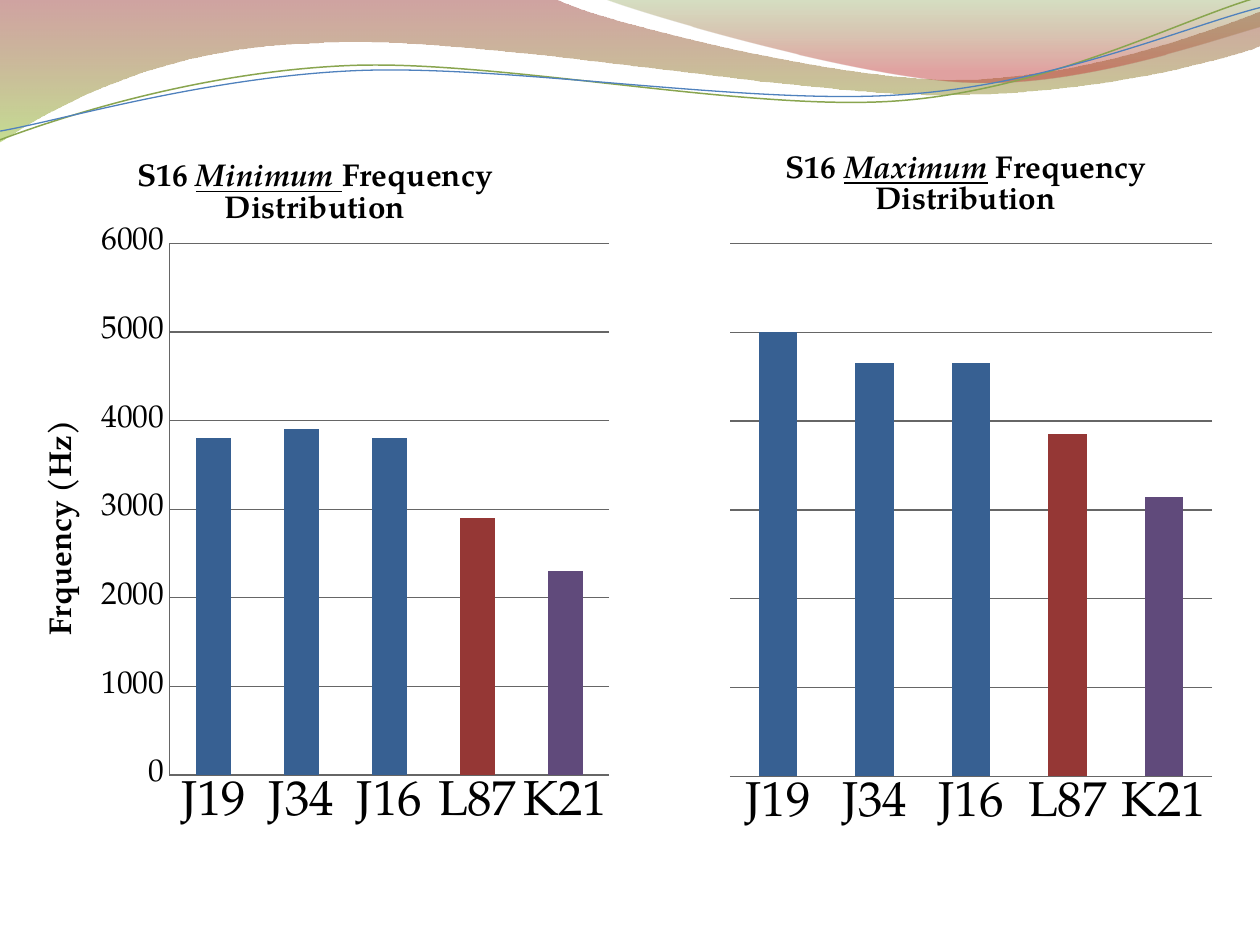
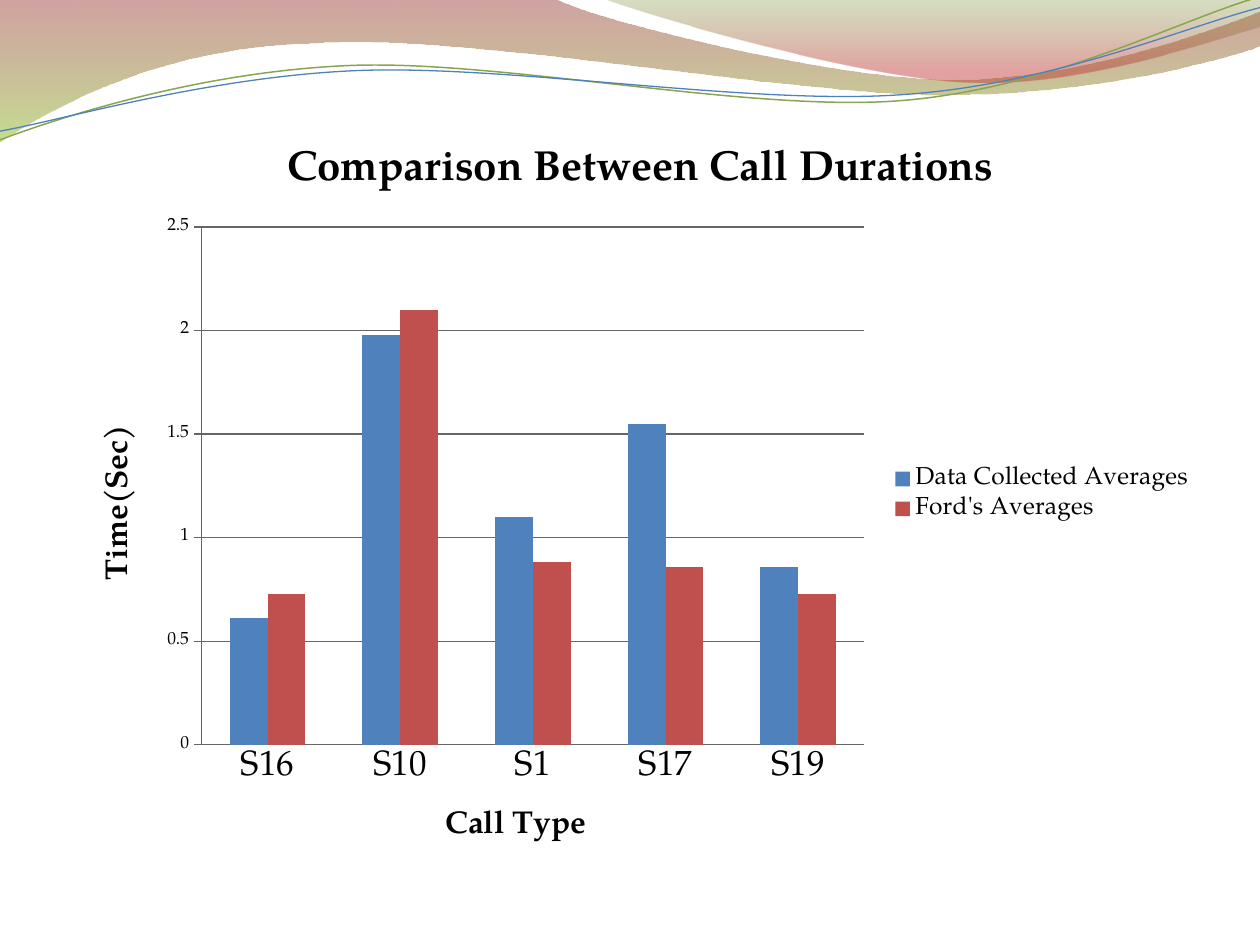
import math

from lxml import etree
from pptx import Presentation
from pptx.chart.data import CategoryChartData
from pptx.dml.color import RGBColor
from pptx.enum import chart as ch
from pptx.oxml import ns
from pptx.util import Inches, Pt

FONT = "TeX Gyre Pagella"
COLORS = {
    "text": "000000", "grid": "666666",
    "blue": "4F81BD", "red": "C0504D", "green": "89A54F",
    "J pod": "376092", "L pod": "953735", "K pod": "604A7B",
    "wave top": "973330", "wave foot": "95C238",
    "crest top": "769537", "crest foot": "BE3330",
}

# A path is a list of points (2 numbers) and Bezier segments (6 numbers), in inches.
WAVE = [(0, 0), (4.4, -0.01),
        (4.76, 0.17, 6.64, 0.63, 7.58, 0.63), (8.53, 0.63, 9.58, 0.26, 10, 0.09),
        (10.01, 0.36),
        (9.83, 0.44, 8.7, 0.76, 7.46, 0.75), (6.22, 0.75, 3.82, 0.28, 2.57, 0.34),
        (1.29, 0.36, 0.46, 0.83, -0.01, 1.13), (0, 0)]
CREST = [(4.79, -0.01),
         (5.09, 0.11, 6.82, 0.62, 7.69, 0.65), (8.56, 0.69, 9.61, 0.32, 10, 0.21),
         (10, 0), (4.79, -0.01)]
GREEN_STRAND = [(0, 1.11), (0.48, 0.93, 1.58, 0.57, 2.77, 0.52),
                (3.95, 0.47, 5.93, 0.89, 7.13, 0.8), (8.33, 0.71, 9.38, 0.15, 9.98, -0.02)]
BLUE_STRAND = [(0, 1.04), (0.47, 0.96, 1.64, 0.61, 2.83, 0.56),
               (4.03, 0.51, 5.97, 0.84, 7.17, 0.75), (8.36, 0.67, 9.41, 0.21, 10, 0.06)]
STRAND_TILT = -2.7

WHALES = ["J19", "J34", "J16", "L87", "K21"]
POD_COLORS = [f"{whale[0]} pod" for whale in WHALES]


def rgb(name):
    return RGBColor.from_string(COLORS[name])


def turn(path, degrees, center):
    """Rotate every point of a path clockwise about the center."""
    cos, sin = math.cos(math.radians(degrees)), math.sin(math.radians(degrees))
    cx, cy = center
    turned = []
    for segment in path:
        numbers = []
        for x, y in zip(segment[::2], segment[1::2]):
            dx, dy = x - cx, y - cy
            numbers += [cx + dx * cos - dy * sin, cy + dx * sin + dy * cos]
        turned.append(tuple(numbers))
    return turned


class Deck:
    def __init__(self):
        self.prs = Presentation()
        self.prs.slide_width, self.prs.slide_height = Inches(10), Inches(7.5)
        self.slide = None

    def new_slide(self):
        self.slide = self.prs.slides.add_slide(self.prs.slide_layouts[6])

    def decorate_master(self):
        """Draw the waves on the current slide and hand them to the master."""
        waves = [
            self.band(WAVE, [("wave top", 0, 45), ("wave foot", 1, 55)]),
            self.band(CREST, [("crest top", 0, 30), ("crest foot", 0.8, 45)]),
            self.strand(GREEN_STRAND, "green", 0.85, (4.99, 0.575)),
            self.strand(BLUE_STRAND, "blue", 0.75, (4.99, 0.59)),
        ]
        for number, wave in enumerate(waves, 101):
            wave.element.nvSpPr.cNvPr.set("id", str(number))
            self.prs.slide_master.shapes.element.append(wave.element)

    def outline(self, path, close):
        points = [(Inches(x), Inches(y)) for segment in path
                  for x, y in zip(segment[::2], segment[1::2])]
        builder = self.slide.shapes.build_freeform(*points[0])
        builder.add_line_segments(points[1:], close=close)
        shape = builder.convert_to_shape()
        shape.shadow.inherit = False
        self.bend(shape, path)
        return shape

    def bend(self, shape, path):
        """Join each three line steps of a Bezier segment into one curve."""
        steps = iter(list(shape.element.iter(ns.qn("a:lnTo"))))
        for segment in path[1:]:
            first = next(steps)
            if len(segment) == 2:
                continue
            first.tag = ns.qn("a:cubicBezTo")
            for _ in range(2):
                step = next(steps)
                first.append(step[0])
                step.getparent().remove(step)

    def band(self, path, stops):
        """Closed shape with a top-down gradient of (colour, position, opacity %)."""
        shape = self.outline(path, close=True)
        shape.line.fill.background()
        shape.fill.gradient()
        shape.fill.gradient_angle = 270
        for stop, (color, position, _) in zip(shape.fill.gradient_stops, stops):
            stop.color.rgb = rgb(color)
            stop.position = position
        tags = shape.element.iter(ns.qn("a:srgbClr"))
        for tag, (_, _, opacity) in zip(tags, stops):
            etree.SubElement(tag, ns.qn("a:alpha"), val=str(opacity * 1000))
        return shape

    def strand(self, path, color, width, center):
        shape = self.outline(turn(path, -STRAND_TILT, center), close=False)
        shape.rotation = STRAND_TILT
        shape.fill.background()
        shape.line.color.rgb = rgb(color)
        shape.line.width = Pt(width)
        return shape

    def style_font(self, font, size, bold=False):
        font.name, font.size, font.bold = FONT, Pt(size), bold
        font.color.rgb = rgb("text")

    def column_chart(self, at, title, title_size, categories, series, plot, label_size):
        data = CategoryChartData()
        data.categories = categories
        for name, values in series:
            data.add_series(name, values)
        chart = self.slide.shapes.add_chart(
            ch.XL_CHART_TYPE.COLUMN_CLUSTERED, *map(Inches, at), data).chart
        self.style_font(chart.font, 10)
        chart.has_legend = False
        self.chart_title(chart, title, title_size)
        columns = chart.plots[0]
        columns.vary_by_categories = False
        columns.gap_width, columns.overlap = 150, 0
        self.place_plot(chart, plot)
        chart.category_axis.major_tick_mark = ch.XL_TICK_MARK.NONE
        self.style_font(chart.category_axis.tick_labels.font, label_size)
        for line in (chart.category_axis.format.line, chart.value_axis.format.line,
                     chart.value_axis.major_gridlines.format.line):
            line.color.rgb = rgb("grid")
            line.width = Pt(0.75)
        return chart

    def chart_title(self, chart, parts, size):
        """Write the title; every second part is italic and underlined."""
        chart.has_title = True
        paragraph = chart.chart_title.text_frame.paragraphs[0]
        for index, part in enumerate(parts):
            run = paragraph.add_run()
            run.text = part
            self.style_font(run.font, size, bold=True)
            if index % 2:
                run.font.italic = run.font.underline = True
        chart.chart_title.include_in_layout = False

    def place_plot(self, chart, plot):
        area = chart._chartSpace.chart.plotArea
        for old in area.findall(ns.qn("c:layout")):
            area.remove(old)
        layout = etree.Element(ns.qn("c:layout"))
        area.insert(0, layout)
        manual = etree.SubElement(layout, ns.qn("c:manualLayout"))
        settings = [("layoutTarget", "inner"), ("xMode", "edge"), ("yMode", "edge")]
        for tag, value in settings + list(zip("xywh", plot)):
            etree.SubElement(manual, ns.qn(f"c:{tag}"), val=str(value))

    def value_scale(self, axis, top, step, ticks=ch.XL_TICK_MARK.NONE):
        axis.minimum_scale, axis.maximum_scale, axis.major_unit = 0, top, step
        axis.major_tick_mark = ticks

    def axis_title(self, axis, title, vertical=False):
        axis.has_title = True
        frame = axis.axis_title.text_frame
        frame.text = title
        self.style_font(frame.paragraphs[0].runs[0].font, 18, bold=True)
        if vertical:
            body = next(axis.axis_title._element.iter(ns.qn("a:bodyPr")))
            body.set("rot", "-5400000")
            body.set("vert", "horz")

    def color_columns(self, series, color):
        series.format.fill.solid()
        series.format.fill.fore_color.rgb = rgb(color)

    def color_by_pod(self, chart):
        series = chart.plots[0].series[0]
        for index, color in enumerate(POD_COLORS):
            self.color_columns(series.points[index], color)

    def legend(self, chart, size):
        chart.has_legend = True
        chart.legend.position = ch.XL_LEGEND_POSITION.RIGHT
        chart.legend.include_in_layout = False
        self.style_font(chart.legend.font, size)


def frequency_slide(deck):
    deck.new_slide()
    deck.decorate_master()
    minimum = deck.column_chart(
        (0, 1.08, 5, 6.17), ["S16 ", "Minimum ", "Frequency Distribution"], 18, WHALES,
        [("Series 1", (3800, 3900, 3800, 2900, 2300))], (0.269, 0.138, 0.698, 0.684), 28)
    deck.value_scale(minimum.value_axis, 6000, 1000)
    deck.style_font(minimum.value_axis.tick_labels.font, 18)
    deck.axis_title(minimum.value_axis, "Frquency (Hz)", vertical=True)
    maximum = deck.column_chart(
        (5.58, 1, 4.17, 6.75), ["S16 ", "Maximum", " Frequency Distribution"], 18, WHALES,
        [("Series 1", (100, 93, 93, 77, 63))], (0.051, 0.138, 0.918, 0.627), 28)
    deck.value_scale(maximum.value_axis, 120, 20)
    maximum.value_axis.visible = False
    for chart in (minimum, maximum):
        deck.color_by_pod(chart)


def duration_slide(deck):
    deck.new_slide()
    durations = deck.column_chart(
        (0.58, 0.92, 9, 6), ["Comparison Between Call Durations"], 24,
        ["S16", "S10", "S1", "S17", "S19"],
        [("Data Collected Averages", (0.61, 1.98, 1.1, 1.55, 0.86)),
         ("Ford's Averages", (0.73, 2.1, 0.88, 0.86, 0.73))],
        (0.113, 0.147, 0.585, 0.685), 20)
    deck.value_scale(durations.value_axis, 2.5, 0.5, ch.XL_TICK_MARK.CROSS)
    deck.style_font(durations.value_axis.tick_labels.font, 10)
    deck.axis_title(durations.value_axis, "Time(Sec)", vertical=True)
    deck.axis_title(durations.category_axis, "Call Type")
    for series, color in zip(durations.plots[0].series, ("blue", "red")):
        deck.color_columns(series, color)
    deck.legend(durations, 14)


def main():
    deck = Deck()
    frequency_slide(deck)
    duration_slide(deck)
    deck.prs.save("out.pptx")


if __name__ == "__main__":
    main()
